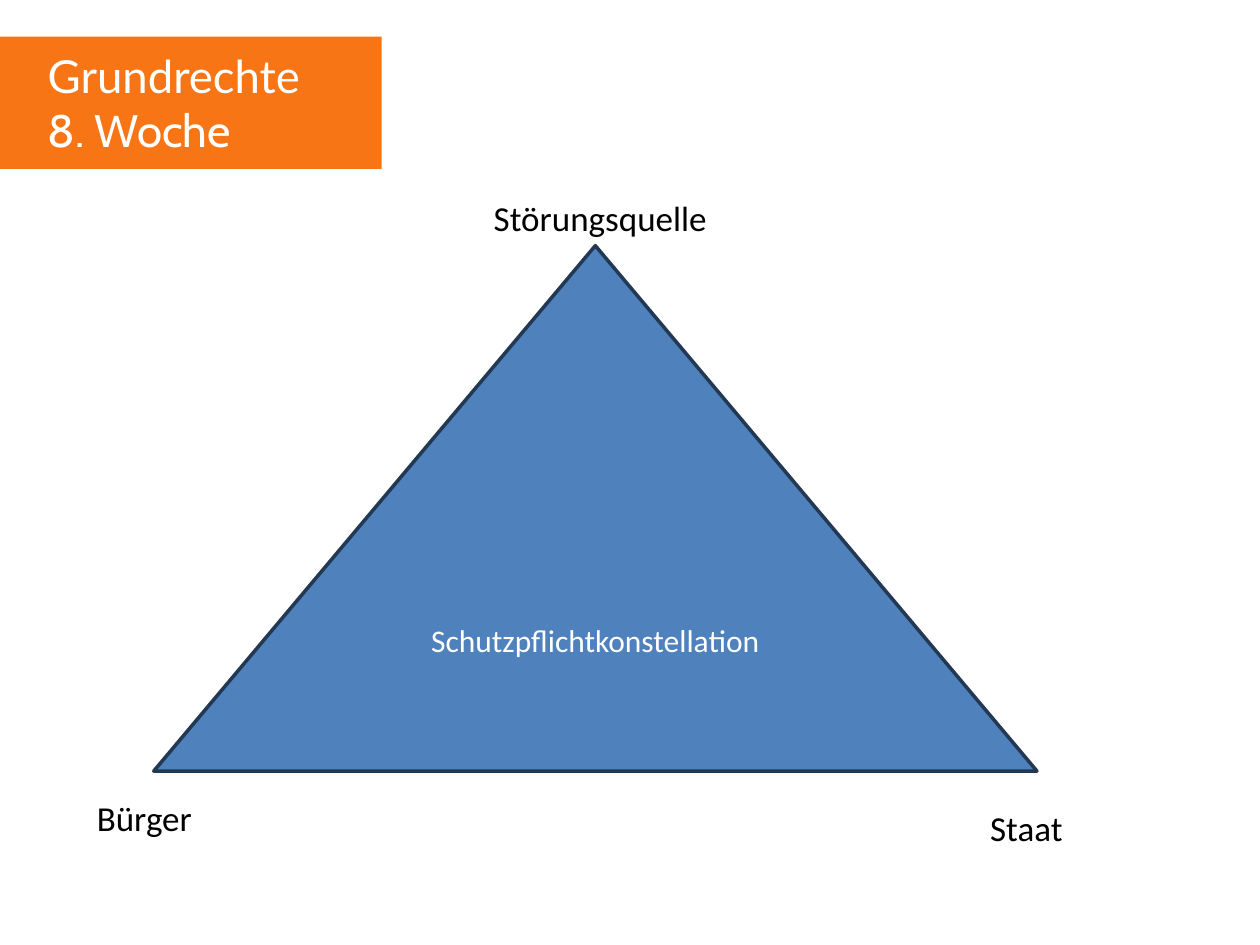
from dataclasses import dataclass

import pptx
import pptx.dml.color
import pptx.enum.shapes
import pptx.enum.text
import pptx.util

WIDTH, HEIGHT = 10, 7.5
WHITE, BLACK = "FFFFFF", "000000"
SHAPES = pptx.enum.shapes.MSO_SHAPE


@dataclass
class Area:
    left: float
    top: float
    width: float
    height: float

    def lengths(self) -> list:
        return [pptx.util.Inches(v) for v in (self.left, self.top, self.width, self.height)]


@dataclass
class Label:
    area: Area
    lines: list[str]
    fonts: list[str]
    size: float
    color: str


def rgb(value: str) -> pptx.dml.color.RGBColor:
    return pptx.dml.color.RGBColor.from_string(value)


def style_run(run, font: str, size: float, color: str) -> None:
    run.font.name = font
    run.font.size = pptx.util.Pt(size)
    run.font.color.rgb = rgb(color)


def draw_shape(slide, kind, area: Area, fill: str):
    shape = slide.shapes.add_shape(kind, *area.lengths())
    shape.shadow.inherit = False
    shape.fill.solid()
    shape.fill.fore_color.rgb = rgb(fill)
    shape.line.fill.background()
    return shape


def draw_label(slide, label: Label) -> None:
    frame = slide.shapes.add_textbox(*label.area.lengths()).text_frame
    frame.word_wrap = True
    frame.auto_size = pptx.enum.text.MSO_AUTO_SIZE.SHAPE_TO_FIT_TEXT
    frame.text = "\n".join(label.lines)
    for paragraph, font in zip(frame.paragraphs, label.fonts):
        style_run(paragraph.runs[0], font, label.size, label.color)


def draw_triangle(slide, area: Area, caption: str) -> None:
    triangle = draw_shape(slide, SHAPES.ISOSCELES_TRIANGLE, area, "4F81BD")
    triangle.line.color.rgb = rgb("233953")
    triangle.line.width = pptx.util.Pt(2)
    frame = triangle.text_frame
    frame.text = caption
    frame.vertical_anchor = pptx.enum.text.MSO_ANCHOR.MIDDLE
    frame.paragraphs[0].alignment = pptx.enum.text.PP_ALIGN.CENTER
    style_run(frame.paragraphs[0].runs[0], "Calibri", 18, WHITE)


def main() -> None:
    deck = pptx.Presentation()
    deck.slide_width = pptx.util.Inches(WIDTH)
    deck.slide_height = pptx.util.Inches(HEIGHT)
    slide = deck.slides.add_slide(deck.slide_layouts[6])

    draw_shape(slide, SHAPES.RECTANGLE, Area(0, 0.29, 3.03, 1.05), "F77515")
    draw_label(slide, Label(Area(0.28, 0.33, 2.6, 0.98), ["Grundrechte", "8. Woche"],
                            ["Lato", "Cabin"], 26, WHITE))
    draw_triangle(slide, Area(1.22, 1.95, 7.01, 4.17), "Schutzpflichtkonstellation")

    corners = {
        "Bürger": Area(0.67, 6.27, 1.65, 0.44),
        "Staat": Area(7.76, 6.35, 1.57, 0.44),
        "Störungsquelle": Area(3.82, 1.51, 1.97, 0.44),
    }
    for party, area in corners.items():
        draw_label(slide, Label(area, [party], ["Calibri"], 20, BLACK))

    deck.save("out.pptx")


if __name__ == "__main__":
    main()
